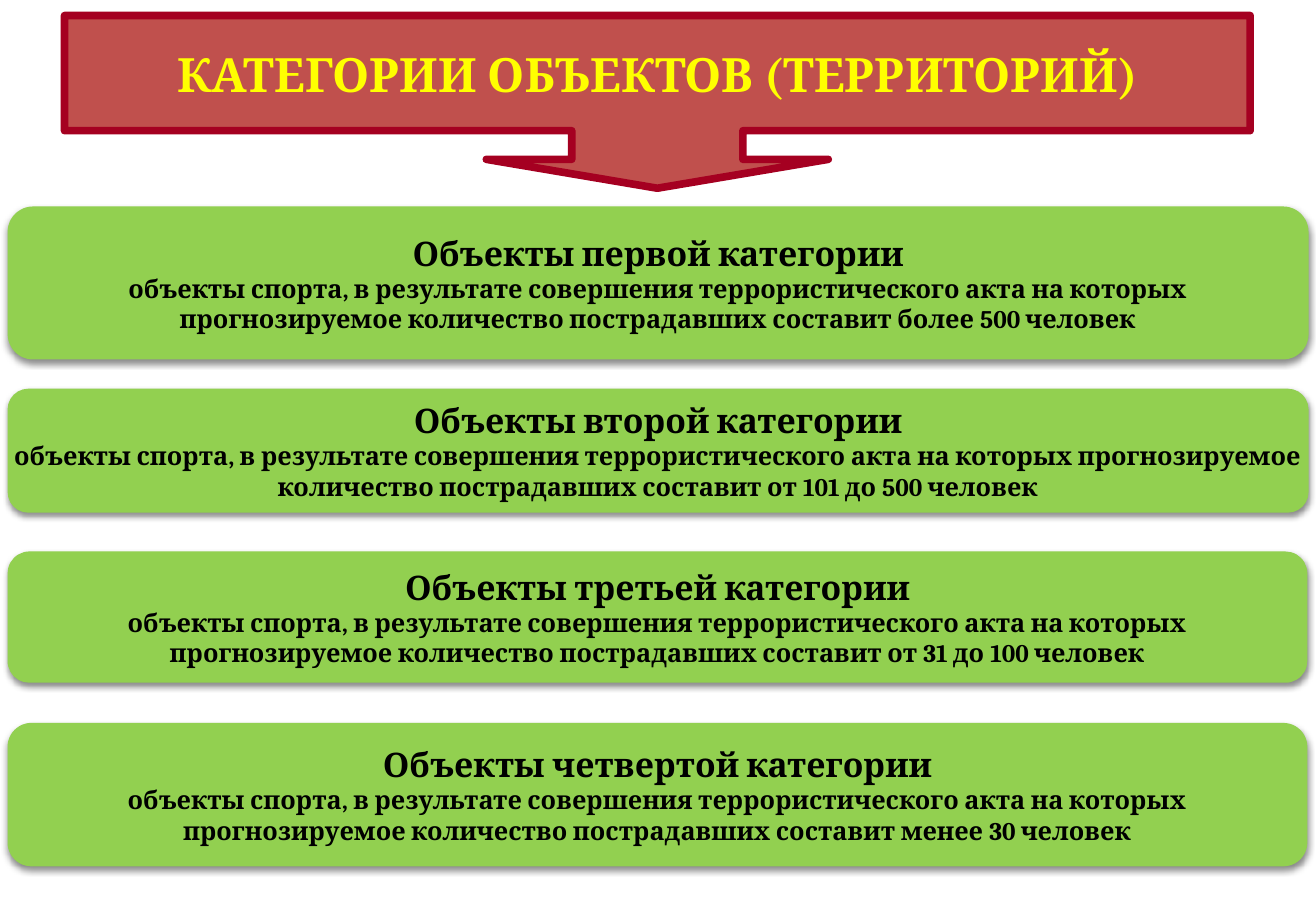
from dataclasses import dataclass

from lxml.etree import SubElement
from pptx import Presentation
from pptx.dml.color import RGBColor
from pptx.enum.shapes import MSO_SHAPE
from pptx.enum.text import MSO_ANCHOR, PP_ALIGN
from pptx.oxml.ns import qn
from pptx.util import Pt


@dataclass(frozen=True)
class Theme:
    font: str = "Cambria"
    green: RGBColor = RGBColor(0x92, 0xD0, 0x50)
    red: RGBColor = RGBColor(0xC0, 0x50, 0x4D)
    edge: RGBColor = RGBColor(0xA5, 0x00, 0x21)
    yellow: RGBColor = RGBColor(0xFF, 0xFF, 0x00)
    black: RGBColor = RGBColor(0, 0, 0)
    title: int = 28
    head: int = 20
    body: int = 15


theme = Theme()


def write(frame, lines, color):
    """Fill a frame with centred bold paragraphs, given as (text, size)."""
    frame.word_wrap = True
    frame.vertical_anchor = MSO_ANCHOR.MIDDLE
    frame.margin_left = frame.margin_right = 0
    frame.margin_top = frame.margin_bottom = 0
    frame.text = "\n".join(text for text, size in lines)
    for para, (text, size) in zip(frame.paragraphs, lines):
        para.alignment = PP_ALIGN.CENTER
        para.font.name = theme.font
        para.font.size = Pt(size)
        para.font.bold = True
        para.font.color.rgb = color


def add_shadow(shape):
    shape.shadow.inherit = False
    effects = shape._element.spPr.find(qn("a:effectLst"))
    outer = SubElement(effects, qn("a:outerShdw"), blurRad=str(Pt(4)),
                       dist=str(Pt(2)), dir="5400000", rotWithShape="0")
    tint = SubElement(outer, qn("a:srgbClr"), val=str(theme.black))
    SubElement(tint, qn("a:alpha"), val="46000")


deck = Presentation()
deck.slide_width, deck.slide_height = Pt(780), Pt(540)
slide = deck.slides.add_slide(deck.slide_layouts[5])
shapes = slide.shapes

# Title banner: the callout's box takes two thirds of its height
left, top, width, height = 38.2, 9.2, 702.8, 102.4
share = 0.667
banner = shapes.add_shape(MSO_SHAPE.DOWN_ARROW_CALLOUT,
                          Pt(left), Pt(top), Pt(width), Pt(height))
for i, value in enumerate((0.99, 0.99, 0.167, share)):
    banner.adjustments[i] = value
banner.shadow.inherit = False
banner.fill.solid()
banner.fill.fore_color.rgb = theme.red
banner.line.color.rgb = theme.edge
banner.line.width = Pt(4.5)

title = shapes.title
title.left, title.top = Pt(left), Pt(top)
title.width, title.height = Pt(width), Pt(height * share)
write(title.text_frame, [("КАТЕГОРИИ ОБЪЕКТОВ (ТЕРРИТОРИЙ)", theme.title)],
      theme.yellow)
shapes._spTree.append(title._element)  # bring the title in front of the banner

# Category cards: ordinal, victims, top, width, height
cards = [
    ("первой", "более 500", 122.4, 771.1, 90.7),
    ("второй", "от 101 до 500", 230.4, 771.1, 73.5),
    ("третьей", "от 31 до 100", 326.9, 770.4, 77.8),
    ("четвертой", "менее 30", 428.5, 770.4, 85),
]
for rank, count, top, width, height in cards:
    card = shapes.add_shape(MSO_SHAPE.ROUNDED_RECTANGLE,
                            Pt(4.5), Pt(top), Pt(width), Pt(height))
    card.fill.solid()
    card.fill.fore_color.rgb = theme.green
    card.line.fill.background()
    add_shadow(card)
    write(card.text_frame, [
        (f"Объекты {rank} категории", theme.head),
        ("объекты спорта, в результате совершения террористического акта "
         "на которых прогнозируемое количество пострадавших составит "
         f"{count} человек", theme.body),
    ], theme.black)

deck.save("out.pptx")
